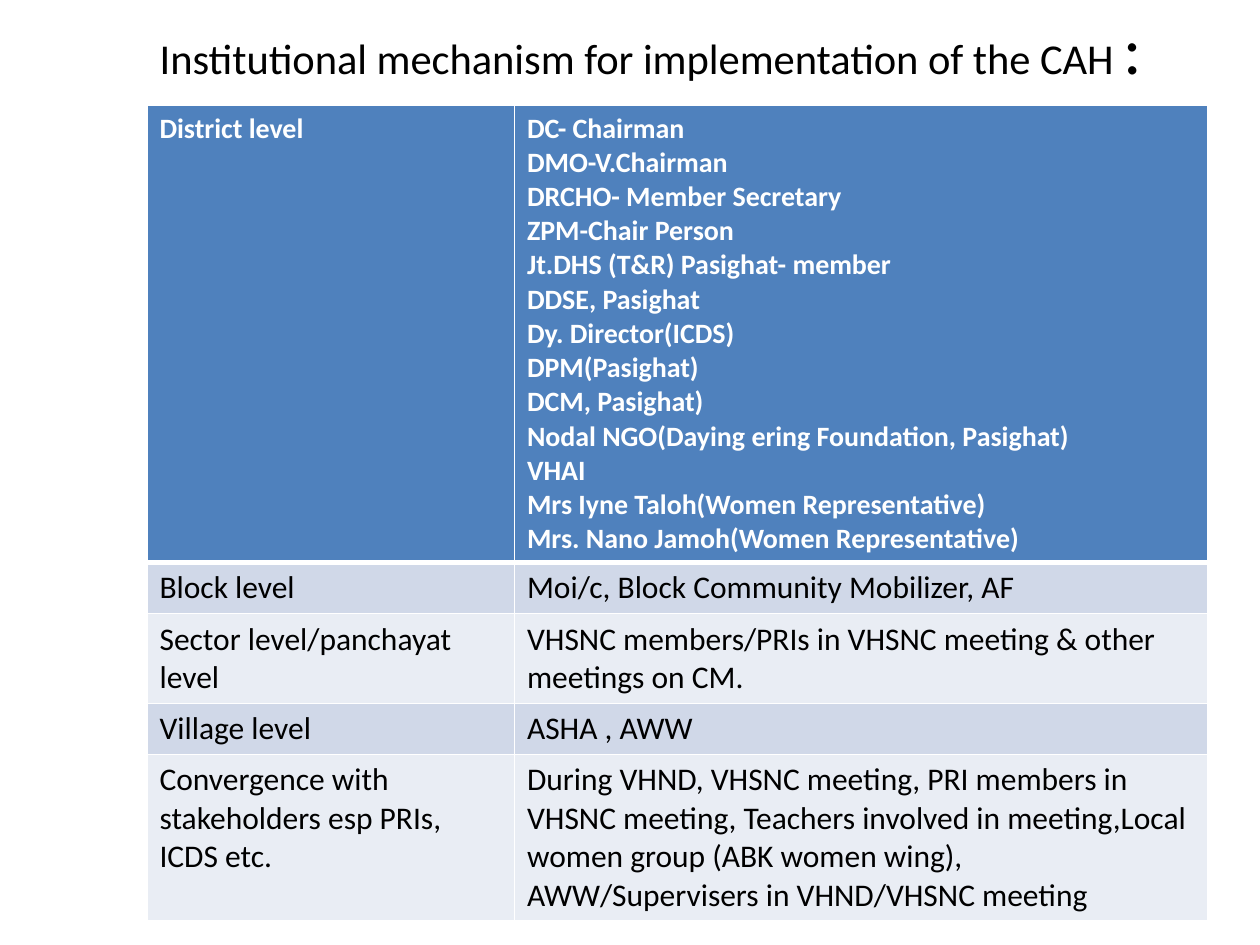
from lxml import etree
from pptx import Presentation
from pptx.dml.color import RGBColor
from pptx.enum import text
from pptx.oxml import ns
from pptx.util import Pt

TITLE = [("Institutional mechanism for implementation of the CAH ", "title"),
         (":", "colon")]
ROWS = [
    (["District level"],
     ["DC- Chairman",
      "DMO-V.Chairman",
      "DRCHO- Member Secretary",
      "ZPM-Chair Person",
      "Jt.DHS (T&R) Pasighat- member",
      "DDSE, Pasighat",
      "Dy. Director(ICDS)",
      "DPM(Pasighat)",
      "DCM, Pasighat)",
      "Nodal NGO(Daying ering Foundation, Pasighat)",
      "VHAI",
      "Mrs Iyne Taloh(Women Representative)",
      "Mrs. Nano Jamoh(Women Representative)"]),
    (["Block level"], ["Moi/c, Block Community Mobilizer, AF"]),
    (["Sector level/panchayat level"],
     ["VHSNC members/PRIs in VHSNC meeting & other meetings on CM."]),
    (["Village level"], ["ASHA , AWW"]),
    (["Convergence with stakeholders esp PRIs, ICDS etc."],
     ["During VHND, VHSNC meeting, PRI members in VHSNC meeting, "
      "Teachers involved in meeting,Local women group (ABK women wing), "
      "AWW/Supervisers in VHND/VHSNC meeting"]),
]
THEME = {
    "font": "Calibri",
    "sizes": {"title": 24.3, "colon": 39.6, "header": 16, "body": 18},
    "text": "000000", "header_text": "FFFFFF", "header": "4F81BD",
    "bands": ("D0D8E8", "E9EDF4"), "border": "FFFFFF",
}
SLIDE_SIZE = (720, 540)
TITLE_BOX = (48, 12, 648, 24)
TABLE_ORIGIN = (84, 60)
COLUMN_WIDTHS = (210, 396)
ROW_HEIGHTS = (260.5, 29.2, 51.2, 29.2, 95)


def style_run(run, size, color, bold=False):
    values = {"name": THEME["font"], "size": Pt(THEME["sizes"][size]), "bold": bold}
    for name, value in values.items():
        setattr(run.font, name, value)
    run.font.color.rgb = RGBColor.from_string(color)


def set_borders(cell, widths):
    """Add the cell's edge lines; widths maps edge tags to points."""
    properties = cell._tc.get_or_add_tcPr()
    for index, (edge, width) in enumerate(widths.items()):
        line = etree.Element(ns.qn(f"a:{edge}"), w=str(Pt(width)))
        fill = etree.SubElement(line, ns.qn("a:solidFill"))
        etree.SubElement(fill, ns.qn("a:srgbClr"), val=THEME["border"])
        properties.insert(index, line)


def add_title(slide):
    frame = slide.shapes.add_textbox(*map(Pt, TITLE_BOX)).text_frame
    values = {"word_wrap": True, "auto_size": text.MSO_AUTO_SIZE.NONE,
              "vertical_anchor": text.MSO_ANCHOR.MIDDLE,
              "margin_top": Pt(5), "margin_bottom": 0}
    for name, value in values.items():
        setattr(frame, name, value)
    paragraph = frame.paragraphs[0]
    paragraph.alignment = text.PP_ALIGN.CENTER
    for words, size in TITLE:
        run = paragraph.add_run()
        run.text = words
        style_run(run, size, THEME["text"])


def fill_cell(cell, lines, row):
    header = row == 0
    color = THEME["header"] if header else THEME["bands"][(row - 1) % 2]
    cell.fill.solid()
    cell.fill.fore_color.rgb = RGBColor.from_string(color)
    set_borders(cell, {"lnL": 1, "lnR": 1, "lnT": 3 if row == 1 else 1,
                       "lnB": 3 if header else 1})
    cell.text_frame.text = "\n".join(lines)
    for paragraph in cell.text_frame.paragraphs:
        style_run(paragraph.runs[0], "header" if header else "body",
                  THEME["header_text"] if header else THEME["text"], header)


def add_levels_table(slide):
    size = (sum(COLUMN_WIDTHS), sum(ROW_HEIGHTS))
    table = slide.shapes.add_table(len(ROWS), len(COLUMN_WIDTHS),
                                   *map(Pt, TABLE_ORIGIN + size)).table
    for column, width in zip(table.columns, COLUMN_WIDTHS):
        column.width = Pt(width)
    for row, (contents, height) in enumerate(zip(ROWS, ROW_HEIGHTS)):
        table.rows[row].height = Pt(height)
        for column, lines in enumerate(contents):
            fill_cell(table.cell(row, column), lines, row)


def main():
    presentation = Presentation()
    presentation.slide_width, presentation.slide_height = map(Pt, SLIDE_SIZE)
    slide = presentation.slides.add_slide(presentation.slide_layouts[6])
    add_title(slide)
    add_levels_table(slide)
    presentation.save("out.pptx")


if __name__ == "__main__":
    main()
